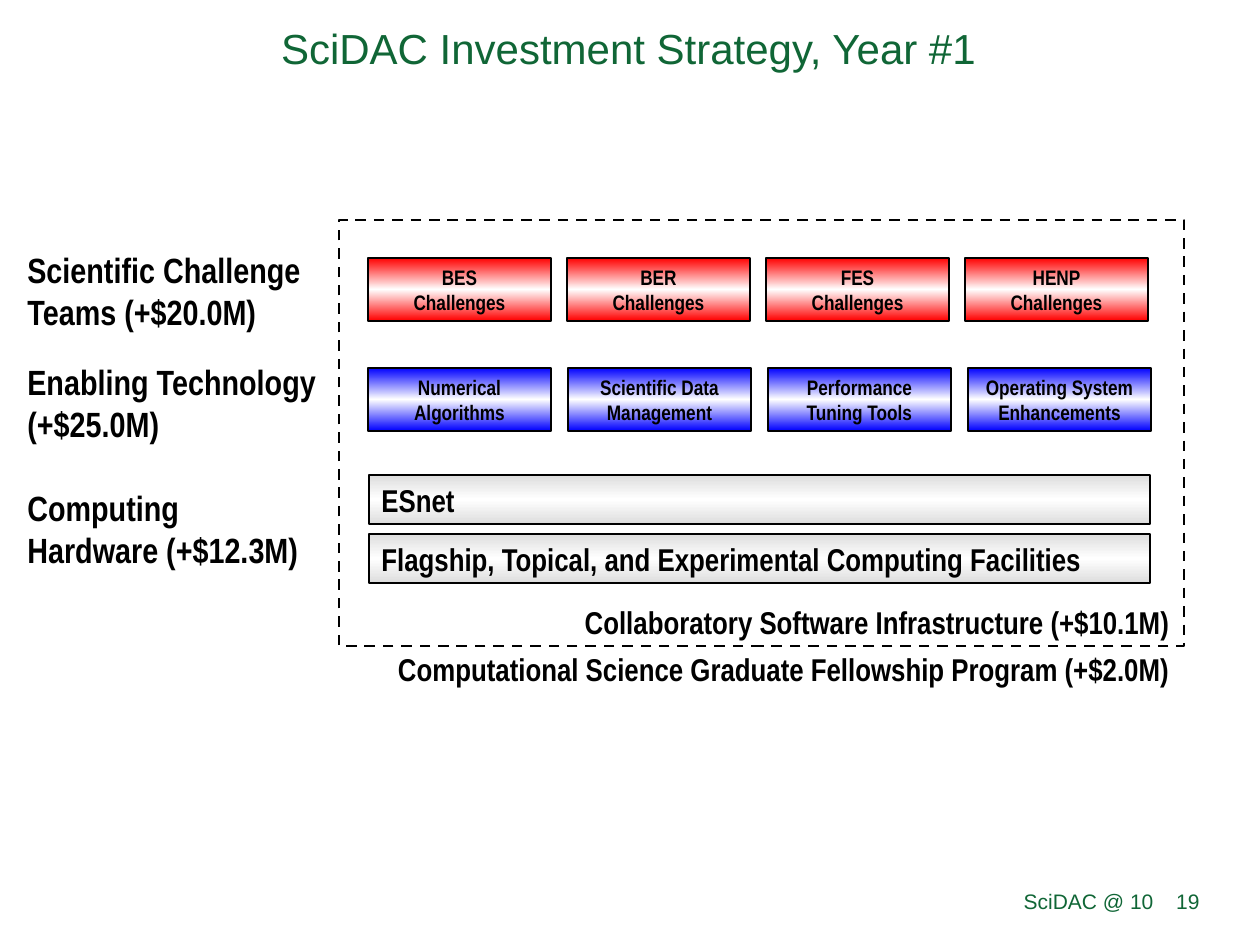
from copy import deepcopy
from pptx import Presentation
from pptx.dml.color import RGBColor
from pptx.enum.dml import MSO_LINE
from pptx.enum.shapes import MSO_SHAPE
from pptx.enum.text import MSO_ANCHOR, MSO_AUTO_SIZE, PP_ALIGN
from pptx.oxml.ns import qn
from pptx.util import Pt

PX = 914400 / 126
GREEN = RGBColor(0x10, 0x66, 0x36)
BLACK = RGBColor(0, 0, 0)
WHITE = RGBColor(255, 255, 255)
RED = RGBColor(255, 0, 0)
BLUE = RGBColor(0, 0, 255)
GRAY = RGBColor(0xDD, 0xDD, 0xDD)


def place(*nums):
    return [round(num * PX) for num in nums]


def write(shape, text, size=18, font="Arial Narrow", color=BLACK, bold=True,
          align=PP_ALIGN.LEFT, wrap=False, fit=MSO_AUTO_SIZE.NONE):
    frame = shape.text_frame
    frame.text = text
    frame.word_wrap = wrap
    frame.auto_size = fit
    frame.vertical_anchor = MSO_ANCHOR.MIDDLE
    for para in frame.paragraphs:
        para.alignment = align
        for run in para.runs:
            run.font.name = font
            run.font.size = Pt(size)
            run.font.bold = bold
            run.font.color.rgb = color


deck = Presentation()
deck.slide_width, deck.slide_height = place(1260, 945)
slide = deck.slides.add_slide(deck.slide_layouts[5])
shapes = slide.shapes

title = shapes.title
title.left, title.top, title.width, title.height = place(98, -10, 1061, 116)
write(title, "SciDAC Investment Strategy, Year #1", size=24, font="Arial",
      color=GREEN, bold=False, align=PP_ALIGN.CENTER, wrap=True)

for left, width, text in [(431, 735, "SciDAC @ 10"), (1159, 53, "19")]:
    foot = shapes.add_textbox(*place(left, 876, width, 50))
    write(foot, text, size=12, font="Arial", color=GREEN, bold=False,
          align=PP_ALIGN.RIGHT, wrap=True)

for top, width, text in [
    (242, 300, "Scientific Challenge\nTeams (+$20.0M)"),
    (354, 316, "Enabling Technology\n(+$25.0M)"),
    (480, 299, "Computing\nHardware (+$12.3M)"),
]:
    label = shapes.add_textbox(*place(15, top, width, 97))
    write(label, text, size=20, fit=MSO_AUTO_SIZE.SHAPE_TO_FIT_TEXT)

border = shapes.add_shape(MSO_SHAPE.RECTANGLE, *place(339, 220, 845, 426))
border.shadow.inherit = False
border.fill.background()
border.line.color.rgb = BLACK
border.line.width = Pt(1.5)
border.line.dash_style = MSO_LINE.DASH

for left, top, width, text in [
    (566, 596, 616, "Collaboratory Software Infrastructure (+$10.1M)"),
    (378, 643, 804,
     "Computational Science Graduate Fellowship Program (+$2.0M)"),
]:
    note = shapes.add_textbox(*place(left, top, width, 51))
    write(note, text, align=PP_ALIGN.RIGHT,
          fit=MSO_AUTO_SIZE.SHAPE_TO_FIT_TEXT)

teams = [name + "\nChallenges" for name in ("BES", "BER", "FES", "HENP")]
tools = ["Numerical\nAlgorithms", "Scientific Data\nManagement",
         "Performance\nTuning Tools", "Operating System\nEnhancements"]
sites = ["ESnet", "Flagship, Topical, and Experimental Computing Facilities"]

bars = []
for row, top, step, color in [(teams, 258, 199, RED), (tools, 368, 200, BLUE)]:
    for col, text in enumerate(row):
        bars.append((368 + col * step, top, 183, 63, color, text, 12,
                     PP_ALIGN.CENTER))
for row, text in enumerate(sites):
    bars.append((369, 475 + row * 59, 781, 49, GRAY, text, 18, PP_ALIGN.LEFT))

for left, top, width, height, color, text, size, align in bars:
    bar = shapes.add_shape(MSO_SHAPE.RECTANGLE,
                           *place(left, top, width, height))
    bar.shadow.inherit = False
    bar.line.color.rgb = BLACK
    bar.line.width = Pt(0.75)
    bar.fill.gradient()
    bar.fill.gradient_angle = 90
    stops = bar.element.spPr.find(".//" + qn("a:gsLst"))
    stops.insert(1, deepcopy(stops[0]))
    for stop, spot, tint in zip(bar.fill.gradient_stops, (0, 0.5, 1),
                                (color, WHITE, color)):
        stop.position = spot
        stop.color.rgb = tint
    write(bar, text, size=size, align=align)

deck.save("out.pptx")
